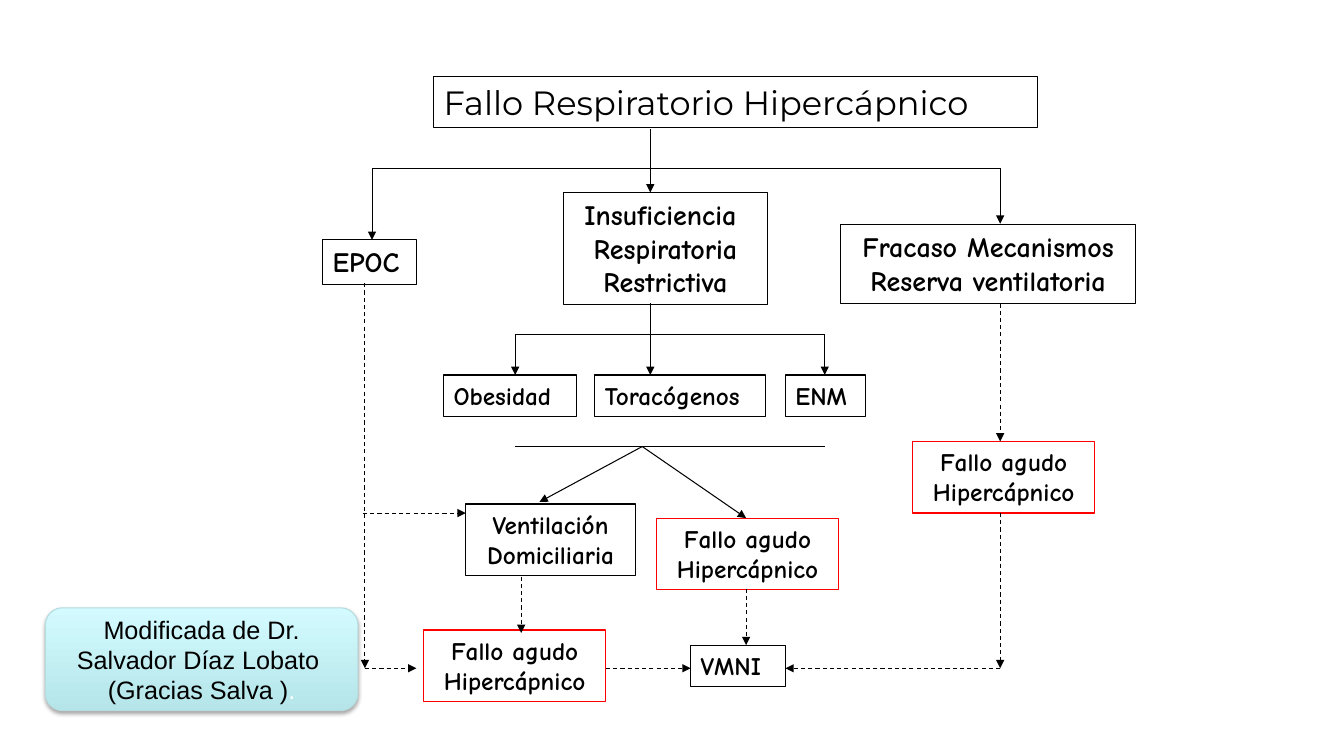
from dataclasses import dataclass

from lxml import etree
from pptx import Presentation
from pptx import util as u
from pptx.dml.color import RGBColor
from pptx.enum import dml, shapes, text
from pptx.oxml import ns

PX = 9144  # EMU per px, 100 px to the inch


@dataclass(frozen=True)
class Theme:
    ink: str = "000000"
    paper: str = "FFFFFF"
    alert: str = "FF0000"
    credit_dark: str = "B5E5E9"
    credit_light: str = "D3FBFF"
    credit_edge: str = "B6DCDF"
    title_font: str = "Montserrat"
    box_font: str = "Comic Neue"
    credit_font: str = "Arial"
    title_size: int = 24
    branch_size: int = 20
    body_size: int = 18
    rule: float = 0.75


THEME = Theme()


@dataclass(frozen=True)
class Box:
    left: int
    top: int
    width: int
    height: int
    lines: tuple[str, ...]
    size: int = THEME.body_size
    edge: str = THEME.ink


@dataclass(frozen=True)
class Link:
    x1: int
    y1: int
    x2: int
    y2: int
    arrow: bool = True
    dashed: bool = False


def acute(left: int, top: int) -> Box:
    return Box(left, top, 181, 71, ("Fallo agudo", "Hipercápnico"), edge=THEME.alert)


def dashed(x1: int, y1: int, x2: int, y2: int) -> Link:
    return Link(x1, y1, x2, y2, dashed=True)


def fork(y: int, left: int, right: int, left_end: int, right_end: int) -> list[Link]:
    """A horizontal bar with an arrow down from each end."""
    return [Link(left, y, right, y, arrow=False),
            Link(left, y, left, left_end), Link(right, y, right, right_end)]


# Columns and rows shared by boxes and links
CENTRE, RESERVE, HOME, COPD, ACUTE = 645, 992, 517, 362, 740
SUBTYPE_TOP, BASE = 372, 663

BOXES = [
    Box(320, 238, 93, 44, ("EPOC",), THEME.branch_size),
    Box(559, 191, 202, 111, ("Insuficiencia ", "Respiratoria", "Restrictiva"),
        THEME.branch_size),
    Box(834, 223, 292, 78, ("Fracaso Mecanismos", "Reserva ventilatoria"),
        THEME.branch_size),
    Box(440, SUBTYPE_TOP, 132, 41, ("Obesidad",)),
    Box(590, SUBTYPE_TOP, 169, 41, ("Toracógenos",)),
    Box(779, SUBTYPE_TOP, 79, 41, ("ENM",)),
    Box(462, 500, 168, 71, ("Ventilación", "Domiciliaria")),
    Box(685, 640, 94, 41, ("VMNI",)),
    acute(651, 514),
    acute(420, 625),
    acute(905, 438),
]

LINKS = [
    # Causes
    *fork(167, 369, RESERVE, 238, 222),
    Link(CENTRE, 128, CENTRE, 191),
    # Restrictive subtypes
    *fork(332, 511, 818, SUBTYPE_TOP, SUBTYPE_TOP),
    Link(CENTRE, 301, CENTRE, SUBTYPE_TOP),
    # Subtypes to outcomes
    Link(511, 443, 818, 443, arrow=False),
    Link(637, 443, 535, 498),
    Link(637, 443, ACUTE, 514),
    # Course towards ventilation
    dashed(COPD, 281, COPD, BASE),
    dashed(360, 509, 462, 509),
    dashed(COPD, BASE, 413, BASE),
    dashed(HOME, 572, HOME, 628),
    dashed(601, BASE, 685, BASE),
    dashed(ACUTE, 584, ACUTE, 640),
    dashed(RESERVE, 301, RESERVE, 438),
    dashed(RESERVE, 509, RESERVE, BASE),
    dashed(RESERVE, BASE, 779, BASE),
]


def px(*values: int) -> list[u.Emu]:
    return [u.Emu(value * PX) for value in values]


def rgb(colour: str) -> RGBColor:
    return RGBColor.from_string(colour)


def write(shape, lines: tuple[str, ...], *, font: str, size: int, bold: bool = False,
          colour: str = THEME.ink, align=text.PP_ALIGN.LEFT,
          anchor=text.MSO_ANCHOR.TOP) -> None:
    frame = shape.text_frame
    frame.text = "\n".join(lines)
    frame.word_wrap = True
    frame.auto_size = text.MSO_AUTO_SIZE.NONE
    frame.vertical_anchor = anchor
    for paragraph in frame.paragraphs:
        paragraph.alignment = align
        for run in paragraph.runs:
            run.font.name, run.font.size, run.font.bold = font, u.Pt(size), bold
            run.font.color.rgb = rgb(colour)


def outline(shape, colour: str) -> None:
    shape.line.color.rgb = rgb(colour)
    shape.line.width = u.Pt(THEME.rule)


def draw_title(slide) -> None:
    title = slide.shapes.title
    title.left, title.top, title.width, title.height = px(430, 76, 599, 51)
    outline(title, THEME.ink)
    write(title, ("Fallo Respiratorio Hipercápnico",),
          font=THEME.title_font, size=THEME.title_size)


def draw_box(slide, box: Box) -> None:
    shape = slide.shapes.add_shape(shapes.MSO_SHAPE.RECTANGLE,
                                   *px(box.left, box.top, box.width, box.height))
    shape.shadow.inherit = False
    shape.fill.background()
    outline(shape, box.edge)
    align = text.PP_ALIGN.CENTER if len(box.lines) > 1 else text.PP_ALIGN.LEFT
    write(shape, box.lines, font=THEME.box_font, size=box.size, bold=True, align=align)


def draw_link(slide, link: Link) -> None:
    connector = slide.shapes.add_connector(shapes.MSO_CONNECTOR.STRAIGHT,
                                           *px(link.x1, link.y1, link.x2, link.y2))
    outline(connector, THEME.ink)
    if link.dashed:
        connector.line.dash_style = dml.MSO_LINE.DASH
    if link.arrow:
        etree.SubElement(connector.line._get_or_add_ln(), ns.qn("a:tailEnd"),
                         type="triangle")
    etree.SubElement(connector._element.spPr, ns.qn("a:effectLst"))


def draw_credit(slide) -> None:
    credit = slide.shapes.add_shape(shapes.MSO_SHAPE.ROUNDED_RECTANGLE,
                                    *px(45, 603, 310, 102))
    # Gradient, darker at the bottom
    credit.fill.gradient()
    credit.fill.gradient_angle = 90
    for stop, colour in zip(credit.fill.gradient_stops,
                            (THEME.credit_dark, THEME.credit_light)):
        stop.color.rgb = rgb(colour)
    outline(credit, THEME.credit_edge)
    # Soft shadow below
    credit.shadow.inherit = False
    effects = credit._element.spPr.find(ns.qn("a:effectLst"))
    shadow = etree.SubElement(effects, ns.qn("a:outerShdw"), blurRad=str(u.Pt(3.1)),
                              dist=str(u.Pt(1.8)), dir="5400000", rotWithShape="0")
    tint = etree.SubElement(shadow, ns.qn("a:srgbClr"), val=THEME.ink)
    etree.SubElement(tint, ns.qn("a:alpha"), val="35000")
    write(credit, ("Modificada de Dr. Salvador Díaz Lobato ", "(Gracias Salva )"),
          font=THEME.credit_font, size=THEME.body_size,
          align=text.PP_ALIGN.CENTER, anchor=text.MSO_ANCHOR.MIDDLE)
    # Pale full stop
    stop_run = credit.text_frame.paragraphs[-1].add_run()
    stop_run.text = "."
    stop_run.font.name, stop_run.font.size = THEME.credit_font, u.Pt(THEME.body_size)
    stop_run.font.color.rgb = rgb(THEME.paper)


def main() -> None:
    deck = Presentation()
    deck.slide_width, deck.slide_height = px(1333, 750)
    slide = deck.slides.add_slide(deck.slide_layouts.get_by_name("Title Only"))
    draw_title(slide)
    for box in BOXES:
        draw_box(slide, box)
    for link in LINKS:
        draw_link(slide, link)
    draw_credit(slide)
    deck.save("out.pptx")


if __name__ == "__main__":
    main()
